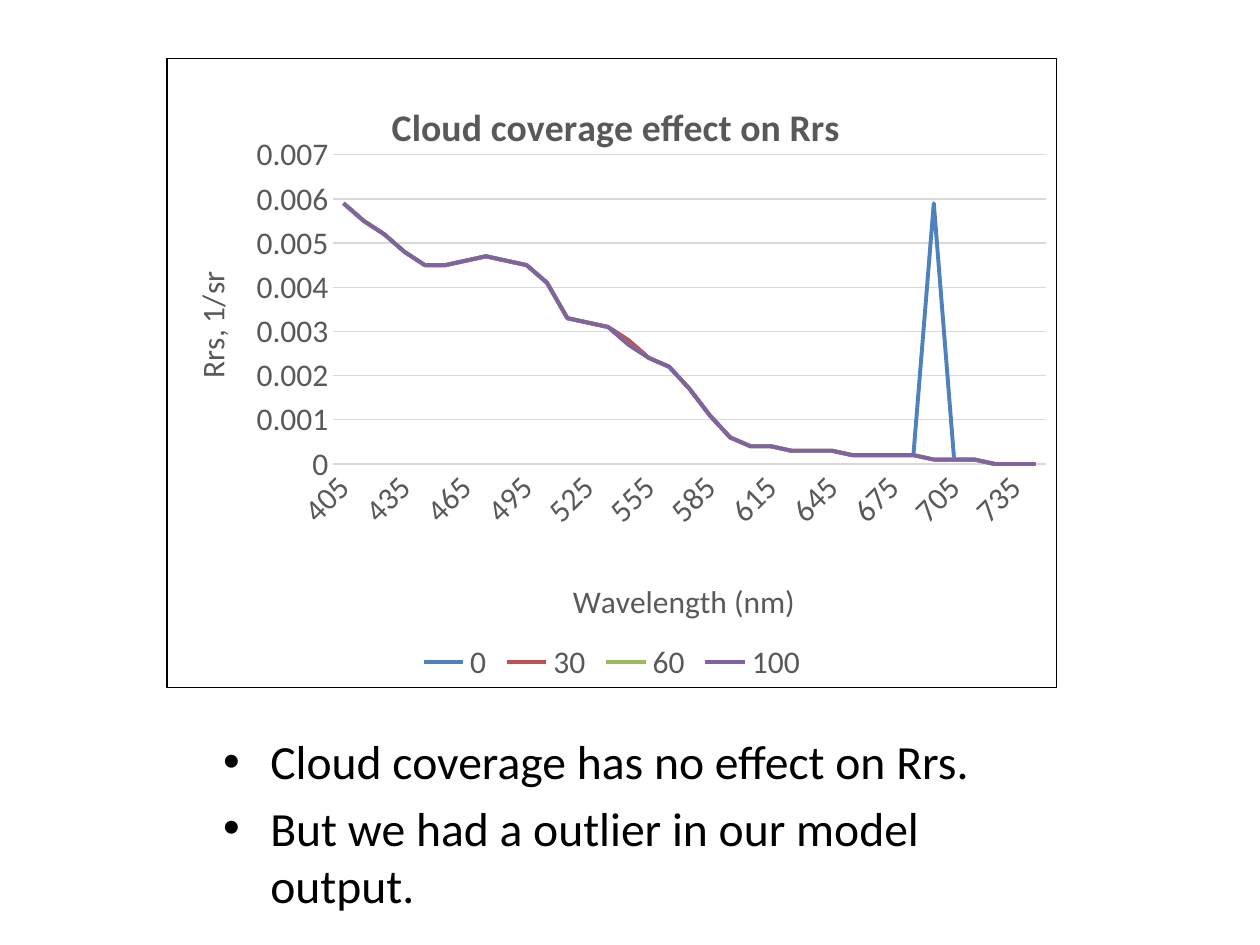
from dataclasses import dataclass
from typing import Any

from lxml import etree
from pptx import Presentation
from pptx.chart.data import CategoryChartData
from pptx.dml.color import RGBColor
from pptx.enum.chart import XL_CHART_TYPE, XL_LEGEND_POSITION, XL_TICK_MARK
from pptx.enum.text import MSO_ANCHOR, MSO_AUTO_SIZE
from pptx.oxml import parse_xml
from pptx.oxml.ns import nsdecls, qn
from pptx.util import Inches, Pt

LINE_CHART = XL_CHART_TYPE.LINE
LEGEND_BOTTOM = XL_LEGEND_POSITION.BOTTOM
NO_TICK = XL_TICK_MARK.NONE
ANCHOR_TOP = MSO_ANCHOR.TOP
NO_AUTOFIT = MSO_AUTO_SIZE.NONE

FONT = "Calibri"
BLACK, GREY, LIGHT_GREY = "000000", "595959", "D9D9D9"
BULLETS = ["Cloud coverage has no effect on Rrs.", "But we had a outlier in our model output."]

# Reflectance every 10 nm, shared by all cloud coverages
WAVELENGTHS = range(405, 746, 10)
REFLECTANCE = [
    0.0059, 0.0055, 0.0052, 0.0048, 0.0045, 0.0045, 0.0046, 0.0047, 0.0046,
    0.0045, 0.0041, 0.0033, 0.0032, 0.0031, 0.0027, 0.0024, 0.0022, 0.0017,
    0.0011, 0.0006, 0.0004, 0.0004, 0.0003, 0.0003, 0.0003, 0.0002, 0.0002,
    0.0002, 0.0002, 0.0001, 0.0001, 0.0001, 0, 0, 0,
]


@dataclass(frozen=True)
class Coverage:
    name: str
    color: str
    exceptions: dict[int, float]  # wavelength -> differing reflectance

    def values(self) -> list[float]:
        return [self.exceptions.get(wave, value) for wave, value in zip(WAVELENGTHS, REFLECTANCE)]


COVERAGES = [
    Coverage("0", "4F81BD", {545: 0.0028, 695: 0.0059}),
    Coverage("30", "C0504D", {545: 0.0028}),
    Coverage("60", "9BBB59", {}),
    Coverage("100", "8064A2", {}),
]


def rgb(value: str) -> RGBColor:
    return RGBColor.from_string(value)


def apply(target: Any, formats: dict[str, Any]) -> None:
    for name, value in formats.items():
        setattr(target, name, value)


def style_font(font: Any, size: float, color: str, bold: bool = False) -> None:
    apply(font, {"name": FONT, "size": Pt(size), "bold": bold})
    font.color.rgb = rgb(color)


def style_line(line: Any, color: str, width: float) -> None:
    line.color.rgb = rgb(color)
    line.width = Pt(width)


def set_layout(element: Any, index: int, **values: Any) -> None:
    """Give a chart part a manual place, in fractions of the chart."""
    for old in element.findall(qn("c:layout")):
        element.remove(old)
    layout = etree.Element(qn("c:layout"))
    manual = etree.SubElement(layout, qn("c:manualLayout"))
    for name, value in values.items():
        etree.SubElement(manual, qn(f"c:{name}"), val=str(value))
    element.insert(index, layout)


def set_title(title: Any, text: str, size: float, bold: bool, left: float, top: float) -> None:
    title.text_frame.text = text
    style_font(title.text_frame.paragraphs[0].runs[0].font, size, GREY, bold)
    set_layout(title._element, 1, xMode="edge", yMode="edge", x=left, y=top)


def style_axis(axis: Any, text: str, left: float, top: float) -> None:
    apply(axis, {"major_tick_mark": NO_TICK, "minor_tick_mark": NO_TICK})
    style_font(axis.tick_labels.font, 18, GREY)
    set_title(axis.axis_title, text, 18, False, left, top)


def add_reflectance_chart(slide: Any) -> None:
    data = CategoryChartData(number_format="General")
    data.categories = [str(wave) for wave in WAVELENGTHS]
    for coverage in COVERAGES:
        data.add_series(coverage.name, coverage.values())
    frame = slide.shapes.add_chart(
        LINE_CHART, Inches(1.32), Inches(0.46), Inches(7.07), Inches(5), data)
    chart = frame.chart
    style_font(chart.font, 18, BLACK)

    # Lines
    chart.plots[0].vary_by_categories = False
    for series, coverage in zip(chart.plots[0].series, COVERAGES):
        series.smooth = False
        style_line(series.format.line, coverage.color, 2.25)

    # Titles and axes
    set_title(chart.chart_title, "Cloud coverage effect on Rrs", 21.6, True, 0.245, 0.055)
    wave_axis, value_axis = chart.category_axis, chart.value_axis
    style_axis(wave_axis, "Wavelength (nm)", 0.45, 0.82)
    style_axis(value_axis, "Rrs, 1/sr", 0.02, 0.33)
    style_line(wave_axis.format.line, LIGHT_GREY, 0.75)
    wave_axis._element.find(qn("c:txPr")).find(qn("a:bodyPr")).set("rot", "-2700000")
    skip = etree.Element(qn("c:tickLblSkip"), val="3")
    wave_axis._element.find(qn("c:noMultiLvlLbl")).addprevious(skip)
    apply(value_axis, {"minimum_scale": 0, "maximum_scale": 0.007, "major_unit": 0.001})
    value_axis.format.line.fill.background()
    style_line(value_axis.major_gridlines.format.line, LIGHT_GREY, 0.75)

    # Legend, plot area and frame
    chart.has_legend = True
    apply(chart.legend, {"position": LEGEND_BOTTOM, "include_in_layout": False})
    style_font(chart.legend.font, 18, GREY)
    space = chart._chartSpace
    plot_area = space.find(qn("c:chart")).find(qn("c:plotArea"))
    set_layout(plot_area, 0, layoutTarget="inner", xMode="edge", yMode="edge",
               x=0.187, y=0.153, w=0.801, h=0.492)
    space.find(qn("c:chart")).addnext(parse_xml(
        f'<c:spPr {nsdecls("c", "a")}><a:solidFill><a:srgbClr val="FFFFFF"/></a:solidFill>'
        f'<a:ln w="{Pt(0.75)}"><a:solidFill><a:srgbClr val="{BLACK}"/></a:solidFill></a:ln>'
        '</c:spPr>'))


def fill_findings(box: Any) -> None:
    apply(box, {"left": Inches(1.67), "top": Inches(5.76),
                "width": Inches(6.94), "height": Inches(1.11)})
    frame = box.text_frame
    frame.text = "\n".join(BULLETS)
    apply(frame, {"word_wrap": True, "auto_size": NO_AUTOFIT, "vertical_anchor": ANCHOR_TOP})
    for para in frame.paragraphs:
        style_font(para.runs[0].font, 27.2, BLACK)


def main() -> None:
    deck = Presentation()
    apply(deck, {"slide_width": Inches(10), "slide_height": Inches(7.5)})
    # Content layout: the slide has a bulleted body and no title
    page = deck.slides.add_slide(deck.slide_layouts[1])
    title = page.shapes.title._element
    title.getparent().remove(title)
    fill_findings(page.placeholders[1])
    add_reflectance_chart(page)
    deck.save("out.pptx")


if __name__ == "__main__":
    main()
